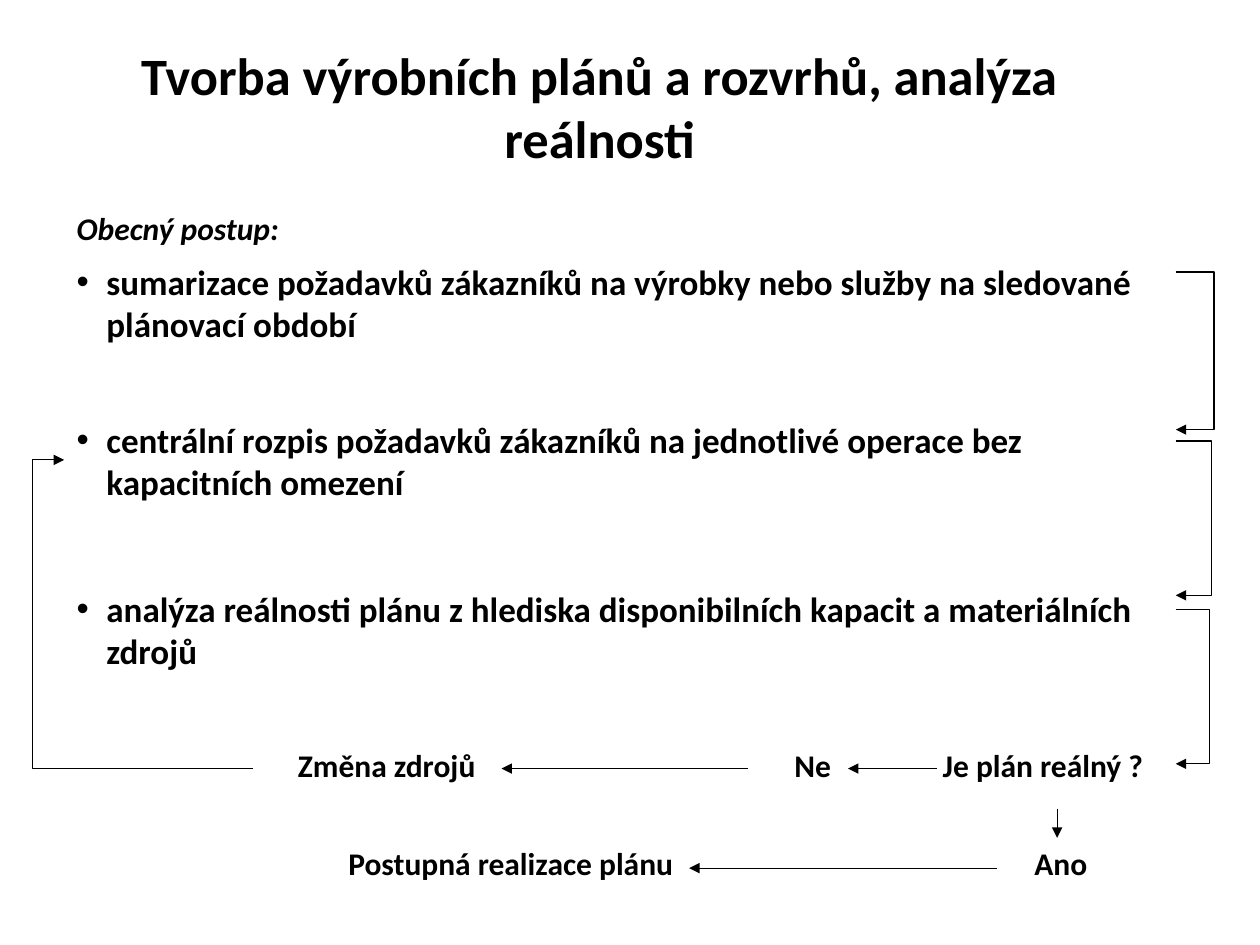
from lxml import etree
from pptx import Presentation
from pptx.dml.color import RGBColor
from pptx.enum import shapes, text
from pptx.oxml import ns
from pptx.util import Pt

BLACK = RGBColor(0, 0, 0)
WHITE = RGBColor(255, 255, 255)
LEFT, WIDE, RIGHT = 36.7, 635, 671.8  # text column
ROW_H, STEP_H, INDENT = 29, 55.8, 17
ROW_1, ROW_2 = 422.6, 478.8  # tops of the decision rows
LINE_1, LINE_2 = 439.2, 496.1  # arrow heights in those rows

TITLE = "Tvorba výrobních plánů a rozvrhů, analýza reálnosti"
HEADING = "Obecný postup:"
STEPS = [  # text, top
    ("sumarizace požadavků zákazníků na výrobky nebo služby na sledované plánovací období", 145.4),
    ("centrální rozpis požadavků zákazníků na jednotlivé operace bez kapacitních omezení", 235.4),
    ("analýza reálnosti plánu z hlediska disponibilních kapacit a materiálních zdrojů", 331.9),
]
LABELS = [  # text, left, top, width
    ("Je plán reálný ? ", 524.2, ROW_1, 147.6),
    ("Ne", 427.7, ROW_1, 73.4),
    ("Změna zdrojů", LEFT, ROW_1, 368.6),
    ("Ano", 569.5, ROW_2, 73.4),
    ("Postupná realizace plánu", LEFT, ROW_2, 510.5),
]
ARROWS = [  # x1, y1, x2, y2
    (535.7, LINE_1, 484.6, LINE_1),
    (427.7, LINE_1, 286.6, LINE_1),
    (569.5, LINE_2, 393.8, LINE_2),
    (604.1, 462.2, 604.1, ROW_2),
]
ELBOWS = [  # x1, y1, x2, y2, x of the bend; the ends must differ a little in x
    (RIGHT, 155.5, RIGHT + 0.1, 245.5, 691.2),
    (RIGHT, 252, RIGHT + 0.1, 340.2, 689.8),
    (RIGHT, 348.5, RIGHT + 0.1, 436.5, 689),
    (144.7, LINE_1, LEFT, 262.8, 18.7),
]

prs = Presentation()
prs.slide_width, prs.slide_height = Pt(720), Pt(540)
s = prs.slides.add_slide(prs.slide_layouts[6])


def add_text(words, x, y, w, h, size, align="CENTER", filled=True, bullet=False, italic=False):
    box = [Pt(v) for v in (x, y, w, h)]
    if filled:
        sp = s.shapes.add_shape(shapes.MSO_SHAPE.RECTANGLE, *box)
        sp.shadow.inherit = False
        sp.fill.solid()
        sp.fill.fore_color.rgb = WHITE
        sp.line.fill.background()
    else:
        sp = s.shapes.add_textbox(*box)
    tf = sp.text_frame
    tf.word_wrap = True
    tf.vertical_anchor = text.MSO_ANCHOR.TOP
    tf.auto_size = text.MSO_AUTO_SIZE.SHAPE_TO_FIT_TEXT
    p = tf.paragraphs[0]
    p.alignment = getattr(text.PP_ALIGN, align)
    if bullet:
        pPr = p._p.get_or_add_pPr()
        pPr.set("marL", str(Pt(INDENT)))
        pPr.set("indent", str(-Pt(INDENT)))
        etree.SubElement(pPr, ns.qn("a:buFont")).set("typeface", "Arial")
        etree.SubElement(pPr, ns.qn("a:buChar")).set("char", "•")
    r = p.add_run()
    r.text = words
    font = {"name": "Calibri", "size": Pt(size), "bold": True, "italic": italic}
    for key, value in font.items():
        setattr(r.font, key, value)
    r.font.color.rgb = BLACK


def add_arrow(x1, y1, x2, y2, bend=None):
    kind = shapes.MSO_CONNECTOR.STRAIGHT if bend is None else shapes.MSO_CONNECTOR.ELBOW
    c = s.shapes.add_connector(kind, Pt(x1), Pt(y1), Pt(x2), Pt(y2))
    c.line.color.rgb = BLACK
    c.line.width = Pt(0.75)
    spPr = c._element.spPr
    etree.SubElement(c.line._get_or_add_ln(), ns.qn("a:tailEnd")).set("type", "triangle")
    etree.SubElement(spPr, ns.qn("a:effectLst"))
    if bend is not None:
        gd = etree.SubElement(spPr.find(".//" + ns.qn("a:avLst")), ns.qn("a:gd"))
        gd.set("name", "adj1")
        gd.set("fmla", f"val {round((bend - x1) / (x2 - x1) * 100000)}")


# Title and heading
add_text(TITLE, 25.2, 20.9, WIDE, 80, 30, filled=False)
add_text(HEADING, LEFT, 115.9, 147.6, ROW_H, 18, "LEFT", filled=False, italic=True)

# Procedure steps
for words, top in STEPS:
    add_text(words, LEFT, top, WIDE, STEP_H, 20, "LEFT", bullet=True)

# Decision labels
for words, x, y, w in LABELS:
    add_text(words, x, y, w, ROW_H, 18)

# Flow arrows
for ends in ARROWS + ELBOWS:
    add_arrow(*ends)

prs.save("out.pptx")
